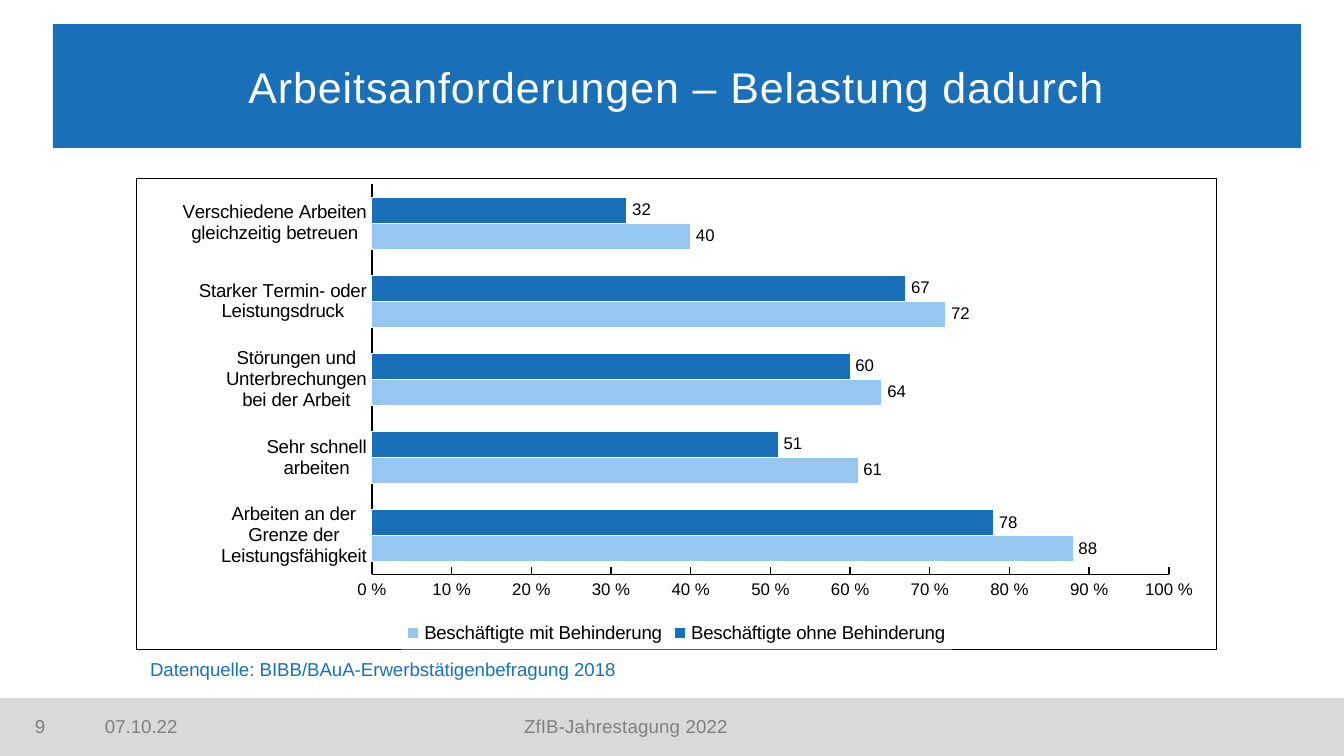
from lxml import etree
from pptx import Presentation
from pptx.chart.data import CategoryChartData
from pptx.dml.color import RGBColor
from pptx.enum.chart import (XL_CHART_TYPE as ChartType,
                             XL_LABEL_POSITION as LabelPos,
                             XL_LEGEND_POSITION as LegendPos,
                             XL_TICK_MARK as Tick)
from pptx.enum.shapes import MSO_SHAPE
from pptx.enum.text import MSO_ANCHOR, PP_ALIGN
from pptx.oxml import parse_xml
from pptx.oxml.ns import nsdecls, qn
from pptx.util import Emu, Pt

SCALE = 9144000 / 1344
FONT = "Arial"
BLUE = RGBColor(0x1A, 0x70, 0xB8)
LIGHT_BLUE = RGBColor(0x96, 0xC7, 0xF0)
BAR_GREY = RGBColor(0xD9, 0xD9, 0xD9)
TEXT_GREY = RGBColor(0x80, 0x80, 0x80)
BLACK = RGBColor(0, 0, 0)
WHITE = RGBColor(255, 255, 255)


def px(*lengths):
    return [Emu(round(n * SCALE)) for n in lengths]


def set_layout(parent, index, x, y, w, h, inner=False):
    """Place a chart part by fractions of the chart's size."""
    old = parent.find(qn("c:layout"))
    if old is not None:
        parent.remove(old)
    layout = parse_xml(f"<c:layout {nsdecls('c')}><c:manualLayout/></c:layout>")
    values = {"layoutTarget": "inner"} if inner else {}
    values.update(xMode="edge", yMode="edge", x=x, y=y, w=w, h=h)
    for tag, value in values.items():
        etree.SubElement(layout[0], qn(f"c:{tag}")).set("val", str(value))
    parent.insert(index, layout)


prs = Presentation()
prs.slide_width, prs.slide_height = px(1344, 756)
s = prs.slides.add_slide(prs.slide_layouts[6])

# Footer band and title banner
for box, color in (((0, 698, 1344, 58), BAR_GREY), ((53, 24, 1248, 124), BLUE)):
    banner = s.shapes.add_shape(MSO_SHAPE.RECTANGLE, *px(*box))
    banner.shadow.inherit = False
    banner.fill.solid()
    banner.fill.fore_color.rgb = color
    banner.line.fill.background()

tf = banner.text_frame
tf.word_wrap = True
tf.vertical_anchor = MSO_ANCHOR.MIDDLE
p = tf.paragraphs[0]
p.alignment = PP_ALIGN.CENTER
r = p.add_run()
r.text = "Arbeitsanforderungen – Belastung dadurch"
r.font.name, r.font.size, r.font.color.rgb = FONT, Pt(23), WHITE
r.font._element.set("spc", "50")

# Footer texts and source line
for text, box, inset, color, align, spacing in (
    ("07.10.22", (105, 706, 137, 40), 0, TEXT_GREY, PP_ALIGN.LEFT, 0),
    ("ZfIB-Jahrestagung 2022", (281, 706, 690, 40), 0, TEXT_GREY, PP_ALIGN.CENTER, 10),
    ("9", (35, 706, 59, 40), 0, TEXT_GREY, PP_ALIGN.LEFT, 0),
    ("Datenquelle: BIBB/BAuA-Erwerbstätigenbefragung 2018",
     (136, 651, 827, 36), 14, BLUE, PP_ALIGN.LEFT, 0),
):
    tf = s.shapes.add_textbox(*px(*box)).text_frame
    tf.word_wrap = True
    tf.vertical_anchor = MSO_ANCHOR.MIDDLE
    tf.margin_left, tf.margin_right = px(inset, inset)
    p = tf.paragraphs[0]
    p.alignment = align
    p.font.name, p.font.size, p.font.color.rgb = FONT, Pt(10), color
    r = p.add_run()
    r.text = text
    r.font._element.set("spc", str(spacing))

# Bar chart
data = CategoryChartData(number_format="0%")
data.categories = [
    "Verschiedene Arbeiten\ngleichzeitig betreuen",
    "Starker Termin- oder\nLeistungsdruck",
    "Störungen und\nUnterbrechungen\nbei der Arbeit",
    "Sehr schnell\narbeiten",
    "Arbeiten an der\nGrenze der\nLeistungsfähigkeit",
]
data.add_series("Beschäftigte ohne Behinderung", (0.32, 0.67, 0.60, 0.51, 0.78))
data.add_series("Beschäftigte mit Behinderung", (0.40, 0.72, 0.64, 0.61, 0.88))
chart = s.shapes.add_chart(ChartType.BAR_CLUSTERED, *px(136, 178, 1081, 472), data).chart
chart.has_title = False
chart.font.name, chart.font.size, chart.font.color.rgb = FONT, Pt(9), BLACK

plot = chart.plots[0]
plot.gap_width = 100
plot.overlap = 0
plot.vary_by_categories = False
for series, color in zip(plot.series, (BLUE, LIGHT_BLUE)):
    series.format.fill.solid()
    series.format.fill.fore_color.rgb = color
    series.format.line.color.rgb = WHITE
    series.format.line.width = Pt(0.5)
    labels = series.data_labels
    labels.show_value = True
    labels.number_format, labels.number_format_is_linked = "0%", False
    labels.position = LabelPos.OUTSIDE_END
    labels.font.size = Pt(9)
    for i, value in enumerate(series.values):
        label = series.points[i].data_label
        p = label.text_frame.paragraphs[0]
        r = p.add_run()
        r.text = f"{value * 100:.0f}"
        r.font.name, r.font.size, r.font.color.rgb = FONT, Pt(9), BLACK
        label.position = LabelPos.OUTSIDE_END

cat_axis, val_axis = chart.category_axis, chart.value_axis
for axis, tick, size in ((cat_axis, Tick.NONE, 10), (val_axis, Tick.INSIDE, 9)):
    axis.has_major_gridlines = False
    axis.major_tick_mark, axis.minor_tick_mark = tick, Tick.NONE
    axis.format.line.color.rgb = BLACK
    axis.format.line.width = Pt(0.75)
    axis.tick_labels.font.size = Pt(size)
# Reversed categories, with the value axis kept at the bottom
cat_axis.reverse_order = True
val_axis._element.find(qn("c:crosses")).set("val", "max")
val_axis.minimum_scale, val_axis.maximum_scale, val_axis.major_unit = 0, 1, 0.1
val_axis.tick_labels.number_format = r"0\ %"
val_axis.tick_labels.number_format_is_linked = False

chart.has_legend = True
legend = chart.legend
legend.position = LegendPos.BOTTOM
legend.include_in_layout = True
legend.font.size = Pt(10)

# Manual layout, white fills and the frame
space = chart._chartSpace
plot_area = space.chart.plotArea
legend_xml = space.chart.find(qn("c:legend"))
set_layout(plot_area, 0, 0.218, 0.012, 0.738, 0.829, inner=True)
set_layout(legend_xml, 1, 0.245, 0.932, 0.51, 0.07)
WHITE_FILL = '<a:solidFill><a:srgbClr val="FFFFFF"/></a:solidFill>'
BLACK_LINE = '<a:ln w="6350"><a:solidFill><a:srgbClr val="000000"/></a:solidFill></a:ln>'
NO_LINE = "<a:ln><a:noFill/></a:ln>"
for before, line in ((space.chart, BLACK_LINE), (plot_area[-1], NO_LINE),
                     (legend_xml.find(qn("c:overlay")), NO_LINE)):
    before.addnext(parse_xml(
        f"<c:spPr {nsdecls('c', 'a')}>{WHITE_FILL}{line}</c:spPr>"))

prs.save("out.pptx")
